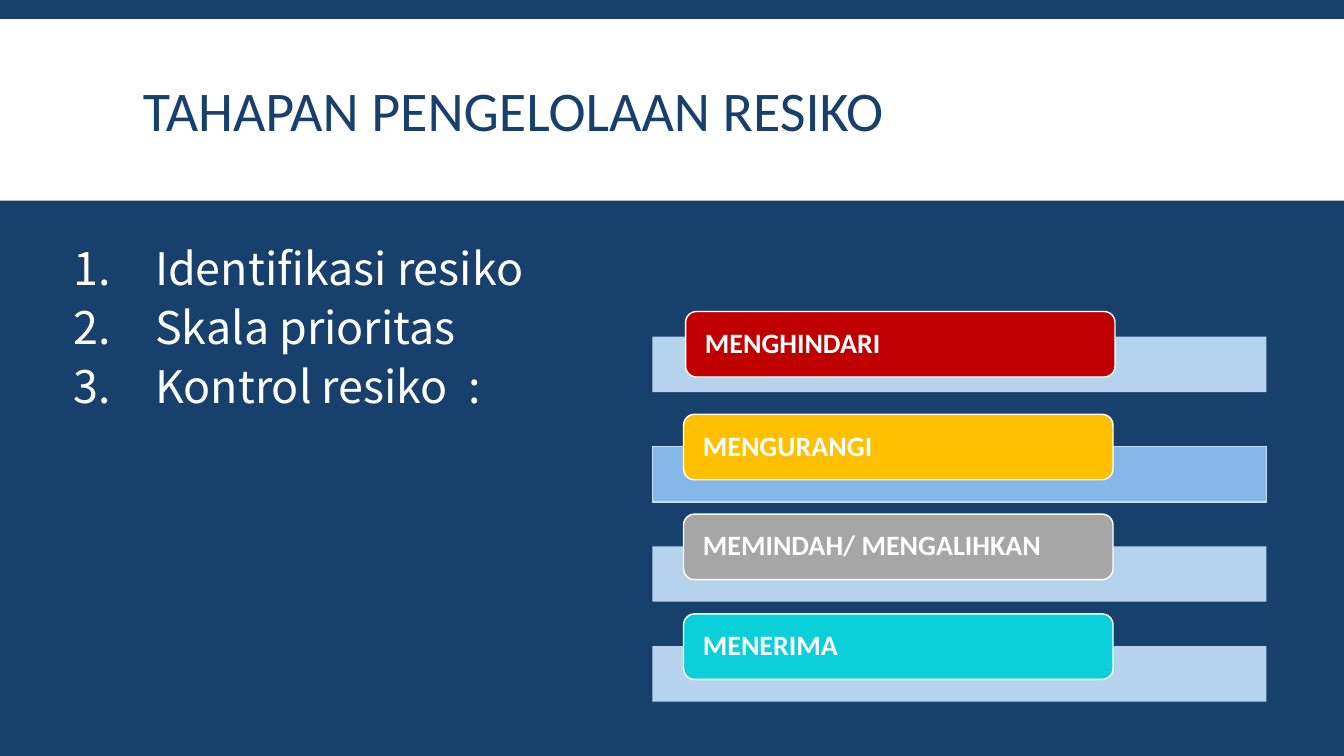
from lxml import etree
from pptx import Presentation
from pptx.dml.color import RGBColor
from pptx.enum.shapes import MSO_SHAPE
from pptx.enum.text import MSO_ANCHOR, PP_ALIGN
from pptx.oxml.ns import qn
from pptx.util import Emu, Pt

PX = 9144
RECT = MSO_SHAPE.RECTANGLE
ROUNDED = MSO_SHAPE.ROUNDED_RECTANGLE
MIDDLE = MSO_ANCHOR.MIDDLE
LEFT = PP_ALIGN.LEFT
JUSTIFY = PP_ALIGN.JUSTIFY

NAVY = RGBColor(0x17, 0x40, 0x6D)
WHITE = RGBColor(0xFF, 0xFF, 0xFF)
PALE_BLUE = RGBColor(0xC8, 0xE3, 0xFB)
SKY_BLUE = RGBColor(0x91, 0xC6, 0xF7)
RED = RGBColor(0xC0, 0x00, 0x00)
AMBER = RGBColor(0xFF, 0xC0, 0x00)
GREY = RGBColor(0xA6, 0xA6, 0xA6)
TURQUOISE = RGBColor(0x0B, 0xD0, 0xD9)

LATIN = "Calibri"
BODY = "Noto Sans CJK SC"

STAGES = ["Identifikasi resiko", "Skala prioritas", "Kontrol resiko  :"]
CONTROLS = [
    ("MENGHINDARI", RED, 680, 309, 334, PALE_BLUE, None),
    ("MENGURANGI", AMBER, 678, 411, 443, SKY_BLUE, PALE_BLUE),
    ("MEMINDAH/ MENGALIHKAN", GREY, 678, 510, 542, PALE_BLUE, None),
    ("MENERIMA", TURQUOISE, 678, 609, 641, PALE_BLUE, None),
]


def px(*lengths):
    return [Emu(length * PX) for length in lengths]


def add_block(slide, kind, box, fill, line=None):
    block = slide.shapes.add_shape(kind, *px(*box))
    block.shadow.inherit = False
    block.fill.solid()
    block.fill.fore_color.rgb = fill
    if line is None:
        block.line.fill.background()
    else:
        block.line.color.rgb = line
        block.line.width = Pt(1)
    return block


def set_opacity(block, percent):
    color = block.fill._xPr.find(qn("a:solidFill"))[0]
    etree.SubElement(color, qn("a:alpha")).set("val", str(percent * 1000))


def style_paragraph(paragraph, font_name, size, color, spacing, align=LEFT, bold=False):
    paragraph.alignment = align
    paragraph.line_spacing = spacing
    for run in paragraph.runs:
        run.font.name = font_name
        run.font.size = Pt(size)
        run.font.color.rgb = color
        run.font.bold = bold
        east_asian = etree.SubElement(run.font._element, qn("a:ea"))
        east_asian.set("typeface", font_name)


def number_paragraph(paragraph, margin, indent):
    properties = paragraph._p.get_or_add_pPr()
    properties.set("marL", str(margin * PX))
    properties.set("indent", str(indent * PX))
    numbering = etree.SubElement(properties, qn("a:buAutoNum"))
    numbering.set("type", "arabicPeriod")


def add_title(slide, text):
    title = slide.shapes.add_textbox(*px(132, 31, 1070, 165)).text_frame
    title.word_wrap = True
    title.vertical_anchor = MIDDLE
    title.text = text
    style_paragraph(title.paragraphs[0], LATIN, 40, NAVY, 0.85)


def add_stages(slide, stages):
    frame = slide.shapes.add_textbox(*px(58, 244, 1080, 242)).text_frame
    frame.word_wrap = True
    frame.text = "\n".join(stages)
    for stage in frame.paragraphs:
        style_paragraph(stage, BODY, 32, WHITE, 0.8, JUSTIFY)
        stage.space_after = Pt(11.5)
        number_paragraph(stage, 86, -81)


def add_control(slide, name, color, left, top, bar_top, bar_color, bar_line):
    bar = add_block(slide, RECT, (647, bar_top, 609, 55), bar_color, bar_line)
    set_opacity(bar, 90)
    label = add_block(slide, ROUNDED, (left, top, 426, 65), color, WHITE)
    frame = label.text_frame
    frame.word_wrap = True
    frame.vertical_anchor = MIDDLE
    frame.margin_left, frame.margin_right = px(16, 16)
    frame.margin_top = frame.margin_bottom = 0
    frame.text = name
    style_paragraph(frame.paragraphs[0], LATIN, 20, WHITE, 0.9, bold=True)


def main():
    deck = Presentation()
    deck.slide_width, deck.slide_height = px(1333, 750)
    slide = deck.slides.add_slide(deck.slide_layouts[6])
    slide.background.fill.solid()
    slide.background.fill.fore_color.rgb = NAVY
    add_block(slide, RECT, (0, 19, 1333, 180), WHITE)
    add_title(slide, "TAHAPAN PENGELOLAAN RESIKO")
    add_stages(slide, STAGES)
    for control in CONTROLS:
        add_control(slide, *control)
    deck.save("out.pptx")


if __name__ == "__main__":
    main()
